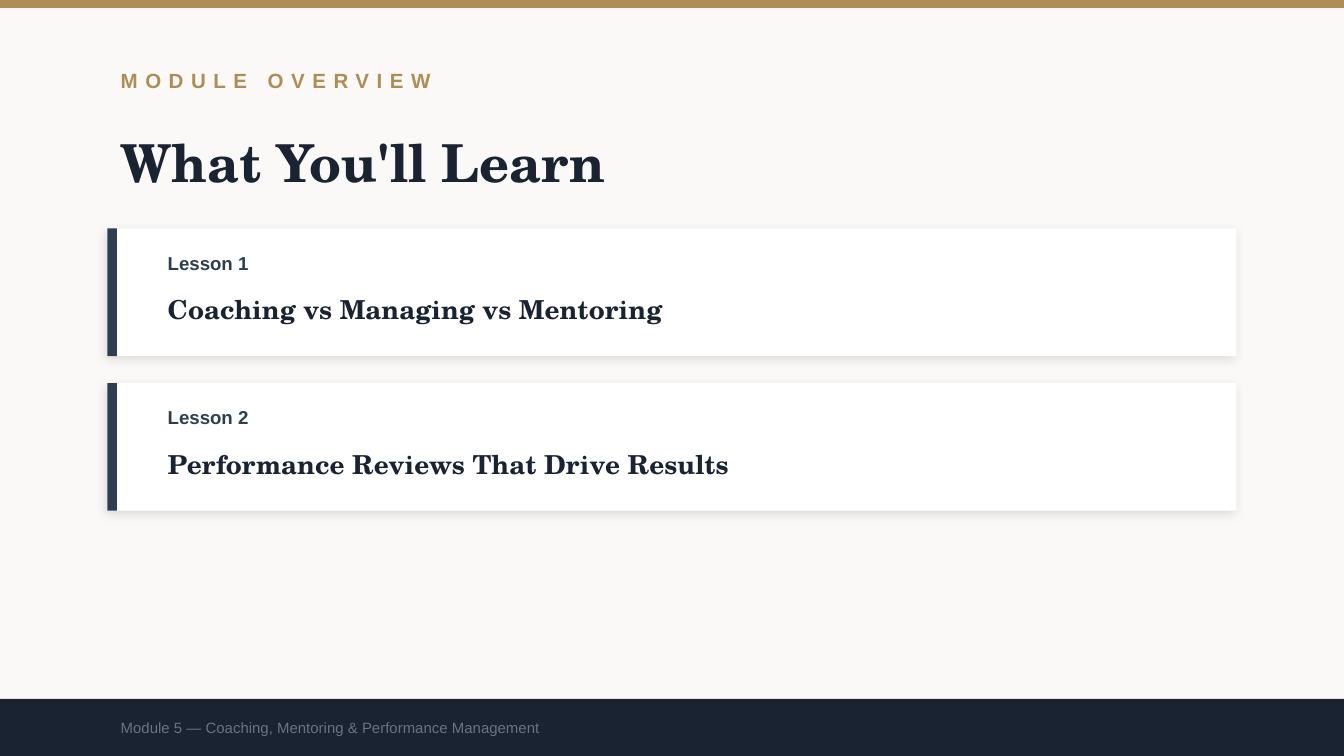
from lxml import etree
from pptx import Presentation
from pptx.dml.color import RGBColor
from pptx.enum.shapes import MSO_SHAPE
from pptx.enum.text import MSO_ANCHOR
from pptx.oxml.ns import qn
from pptx.util import Pt

RECT = MSO_SHAPE.RECTANGLE
MIDDLE = MSO_ANCHOR.MIDDLE
PAPER = RGBColor(0xFA, 0xF9, 0xF7)
WHITE = RGBColor(0xFF, 0xFF, 0xFF)
GOLD = RGBColor(0xB0, 0x8D, 0x57)
NAVY = RGBColor(0x1A, 0x23, 0x32)
SLATE = RGBColor(0x2C, 0x3E, 0x50)
GRAY = RGBColor(0x6B, 0x72, 0x80)
SANS = "Arial"
SERIF = "TeX Gyre Schola"

WIDTH, HEIGHT = 720, 405
LEFT = 57.6
FOOT = 374.4

prs = Presentation()
prs.slide_width, prs.slide_height = Pt(WIDTH), Pt(HEIGHT)
slide = prs.slides.add_slide(prs.slide_layouts[6])
slide.background.fill.solid()
slide.background.fill.fore_color.rgb = PAPER


def add_bar(x, y, w, h, color):
    bar = slide.shapes.add_shape(RECT, Pt(x), Pt(y), Pt(w), Pt(h))
    bar.shadow.inherit = False
    bar.fill.solid()
    bar.fill.fore_color.rgb = color
    bar.line.fill.background()
    return bar


def add_text(x, y, w, h, text, size, face, color, bold=True):
    frame = slide.shapes.add_textbox(Pt(x), Pt(y), Pt(w), Pt(h)).text_frame
    frame.word_wrap = True
    frame.vertical_anchor = MIDDLE
    para = frame.paragraphs[0]
    para.text = text
    font = para.font
    font.size, font.name, font.bold = Pt(size), face, bold
    font.color.rgb = color
    return para


# Header
add_bar(0, 0, WIDTH, 4.32, GOLD)
label = add_text(LEFT, 28.8, 576, 28.8, "MODULE OVERVIEW", 11, SANS, GOLD)
label.runs[0].font._element.set("spc", "400")
add_text(LEFT, 64.8, 576, 43.2, "What You'll Learn", 28, SERIF, NAVY)

# Lesson cards
lessons = ["Coaching vs Managing vs Mentoring", "Performance Reviews That Drive Results"]
for i, lesson in enumerate(lessons):
    top = 122.4 + i * 82.8
    card = add_bar(LEFT, top, 604.8, 68.4, WHITE)
    effects = card._element.spPr.find(qn("a:effectLst"))
    shade = etree.SubElement(
        effects, qn("a:outerShdw"), blurRad=str(Pt(6)), dist=str(Pt(2)),
        dir=str(135 * 60000), algn="bl", rotWithShape="0")
    black = etree.SubElement(shade, qn("a:srgbClr"), val="000000")
    etree.SubElement(black, qn("a:alpha"), val="12000")
    add_bar(LEFT, top, 5.04, 68.4, SLATE)
    add_text(82.8, top + 5.76, 504, 25.2, f"Lesson {i + 1}", 10, SANS, SLATE)
    add_text(82.8, top + 28.8, 561.6, 28.8, lesson, 14, SERIF, NAVY)

# Footer
add_bar(0, FOOT, WIDTH, HEIGHT - FOOT, NAVY)
add_text(LEFT, FOOT, 576, HEIGHT - FOOT,
         "Module 5 — Coaching, Mentoring & Performance Management", 8, SANS, GRAY, False)

prs.save("out.pptx")
